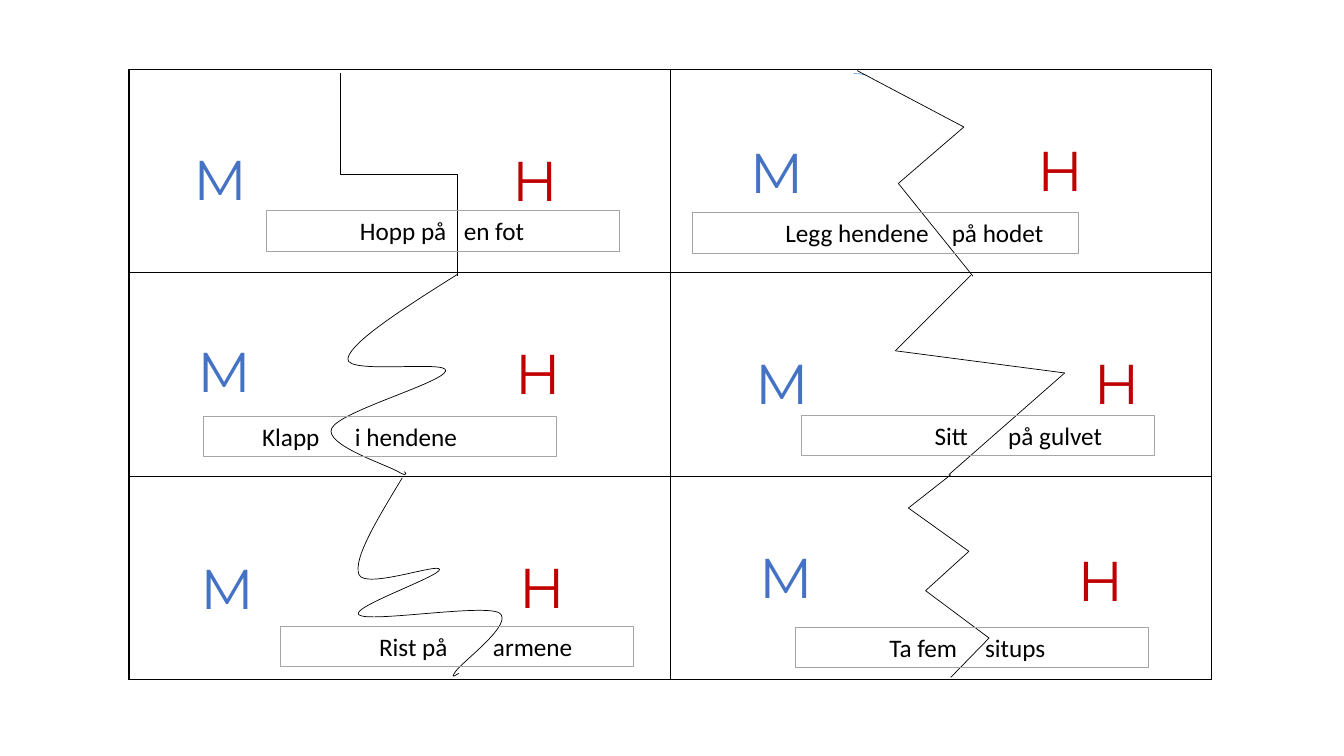
"""Build a slide of six movement tasks split by M and H paths."""
from itertools import pairwise

from lxml import etree
from pptx import Presentation
from pptx.dml.color import RGBColor
from pptx.enum import shapes as kinds, text as styles
from pptx.oxml.ns import qn
from pptx.util import Inches, Pt

BLACK = RGBColor(0x00, 0x00, 0x00)
GREY = RGBColor(0xA5, 0xA5, 0xA5)
BLUE = RGBColor(0x44, 0x72, 0xC4)
LIGHT_BLUE = RGBColor(0x5B, 0x9B, 0xD5)
RED = RGBColor(0xC0, 0x00, 0x00)

M_PLACES = [(1.82, 1.38), (1.86, 3.29), (1.89, 5.44),
            (7.34, 1.32), (7.39, 3.41), (7.43, 5.33)]
H_PLACES = [(4.98, 1.39), (5.01, 3.31), (5.05, 5.43),
            (10.19, 1.3), (10.75, 3.41), (10.59, 5.36)]

TASKS = [
    (2.64, 2.09, 3.5, ("Hopp på", 3.57), ("en fot", 4.6)),
    (6.87, 2.11, 3.83, ("Legg hendene", 7.79), ("på hodet", 9.44)),
    (2.02, 4.13, 3.5, ("Klapp", 2.6), ("i hendene", 3.52)),
    (7.95, 4.12, 3.5, ("Sitt", 9.27), ("på gulvet", 10.0)),
    (2.78, 6.21, 3.5, ("Rist på", 3.76), ("armene", 4.89)),
    (7.89, 6.22, 3.5, ("Ta fem", 8.82), ("situps", 9.77)),
]

TOP_ZIGZAG = [(8.5, 0.7), (9.56, 1.26), (8.91, 1.82), (9.65, 2.74)]
MIDDLE_ZIGZAG = [(9.63, 2.73), (8.88, 3.48), (10.56, 3.7), (9.41, 4.71)]
BOTTOM_ZIGZAG = [(9.43, 4.71), (9.01, 5.04), (9.61, 5.47), (9.18, 5.86),
                 (9.81, 6.33), (9.43, 6.72)]

MIDDLE_CURVE = [
    (4.54, 2.72), (4, 3.06), (3.47, 3.4), (3.45, 3.56),
    (3.43, 3.72), (4.45, 3.57), (4.42, 3.68),
    (4.39, 3.8), (3.37, 4.08), (3.29, 4.25),
    (3.21, 4.41), (3.83, 4.61), (3.95, 4.68),
    (4.07, 4.75), (4.01, 4.67), (4.01, 4.68),
]
BOTTOM_CURVE = [
    (3.99, 4.74), (3.75, 5.14), (3.5, 5.54), (3.56, 5.7),
    (3.62, 5.85), (4.36, 5.58), (4.36, 5.65),
    (4.36, 5.72), (3.46, 6.03), (3.56, 6.1),
    (3.66, 6.18), (4.79, 5.99), (4.95, 6.08),
    (5.11, 6.18), (4.59, 6.56), (4.52, 6.66),
    (4.45, 6.76), (4.54, 6.68), (4.55, 6.68),
]


def write_text(frame, content, *, size, font, color):
    """Fill a text frame with one left-aligned, formatted paragraph."""
    frame.word_wrap = True
    frame.auto_size = styles.MSO_AUTO_SIZE.SHAPE_TO_FIT_TEXT
    paragraph = frame.paragraphs[0]
    paragraph.alignment = styles.PP_ALIGN.LEFT
    run = paragraph.add_run()
    run.text = content
    run.font.size = Pt(size)
    run.font.name = font
    run.font.color.rgb = color
    return paragraph


def outline(shape, color):
    """Give a shape a thin line and neither fill nor shadow."""
    shape.fill.background()
    shape.line.color.rgb = color
    shape.line.width = Pt(0.5)
    shape.shadow.inherit = False


def add_grid(slide, rows, columns):
    """Add the empty bordered table behind the paths."""
    grid = slide.shapes.add_table(rows, columns, Inches(1.28), Inches(0.69),
                                  Inches(10.74), Inches(6.05)).table
    grid.first_row = grid.horz_banding = False
    for cell in grid.iter_cells():
        properties = cell._tc.get_or_add_tcPr()
        for side in ("a:lnL", "a:lnR", "a:lnT", "a:lnB"):
            border = etree.SubElement(properties, qn(side), w=str(Pt(1)))
            fill = etree.SubElement(border, qn("a:solidFill"))
            etree.SubElement(fill, qn("a:srgbClr"), val=str(BLACK))
        cell.fill.background()


def add_path_line(shapes, start, end, kind=kinds.MSO_CONNECTOR.STRAIGHT):
    """Add one thin black connector."""
    path_line = shapes.add_connector(kind, *map(Inches, start + end))
    path_line.line.color.rgb = BLACK
    path_line.line.width = Pt(0.5)
    etree.SubElement(path_line._element.spPr, qn("a:effectLst"))
    return path_line


def add_zigzag(shapes, corners):
    """Join successive corners with straight lines."""
    for start, end in pairwise(corners):
        add_path_line(shapes, start, end)


def add_step(slide):
    """Add the elbow that runs down, across and down again."""
    step = add_path_line(slide.shapes, (4.97, 1.15), (2.95, 2.31),
                         kinds.MSO_CONNECTOR.ELBOW)
    step._element.spPr.find(qn("a:xfrm")).set("rot", str(270 * 60000))


def add_curve(slide, points):
    """Add a Bézier path from a start point and triples of points."""
    points = [(Inches(x), Inches(y)) for x, y in points]
    builder = slide.shapes.build_freeform(*points[0])
    builder.add_line_segments(points[3::3], close=False)
    curve = builder.convert_to_shape()
    outline(curve, BLACK)
    segments = list(curve._element.iter(qn("a:lnTo")))
    for index, segment in enumerate(segments):
        bend = etree.Element(qn("a:cubicBezTo"))
        for x, y in points[3 * index + 1:3 * index + 4]:
            etree.SubElement(bend, qn("a:pt"), x=str(x - curve.left),
                             y=str(y - curve.top))
        segment.getparent().replace(segment, bend)


def add_arc(slide):
    """Add the short blue arc at the top of the right-hand path."""
    arc = slide.shapes.add_shape(kinds.MSO_SHAPE.ARC, Inches(7.78),
                                 Inches(0.73), Inches(1.38), Inches(1.91))
    arc.adjustments[0], arc.adjustments[1] = 162, 166.78
    outline(arc, LIGHT_BLUE)


def add_letter(slide, letter, left, top, width, color):
    """Add one large letter beside a path."""
    box = slide.shapes.add_textbox(Inches(left), Inches(top),
                                   Inches(width), Inches(0.77))
    write_text(box.text_frame, letter, size=40, font="Montserrat", color=color)


def add_task(slide, left, top, width, first, second):
    """Add a framed task whose two halves stand either side of the path."""
    (first_words, first_left), (second_words, second_left) = first, second
    task = slide.shapes.add_shape(kinds.MSO_SHAPE.RECTANGLE, Inches(left),
                                  Inches(top), Inches(width), Inches(0.4))
    outline(task, GREY)
    task.text_frame.margin_left = Inches(first_left - left)
    task.text_frame.vertical_anchor = styles.MSO_ANCHOR.TOP
    paragraph = write_text(task.text_frame, f"{first_words}\t{second_words}",
                           size=18, font="Calibri", color=BLACK)
    tabs = etree.SubElement(paragraph._p.get_or_add_pPr(), qn("a:tabLst"))
    etree.SubElement(tabs, qn("a:tab"), algn="l",
                     pos=str(Inches(second_left - first_left)))


def main():
    """Build and save the slide."""
    deck = Presentation()
    deck.slide_width, deck.slide_height = Inches(13.33), Inches(7.5)
    slide = deck.slides.add_slide(deck.slide_layouts[6])
    add_grid(slide, 3, 2)
    add_step(slide)
    add_arc(slide)
    add_zigzag(slide.shapes, TOP_ZIGZAG)
    add_curve(slide, MIDDLE_CURVE)
    add_zigzag(slide.shapes.add_group_shape().shapes, MIDDLE_ZIGZAG)
    add_curve(slide, BOTTOM_CURVE)
    add_zigzag(slide.shapes.add_group_shape().shapes, BOTTOM_ZIGZAG)
    for left, top in M_PLACES:
        add_letter(slide, "M", left, top, 1.2, BLUE)
    for left, top in H_PLACES:
        add_letter(slide, "H", left, top, 0.89, RED)
    for task in TASKS:
        add_task(slide, *task)
    deck.save("out.pptx")


if __name__ == "__main__":
    main()
